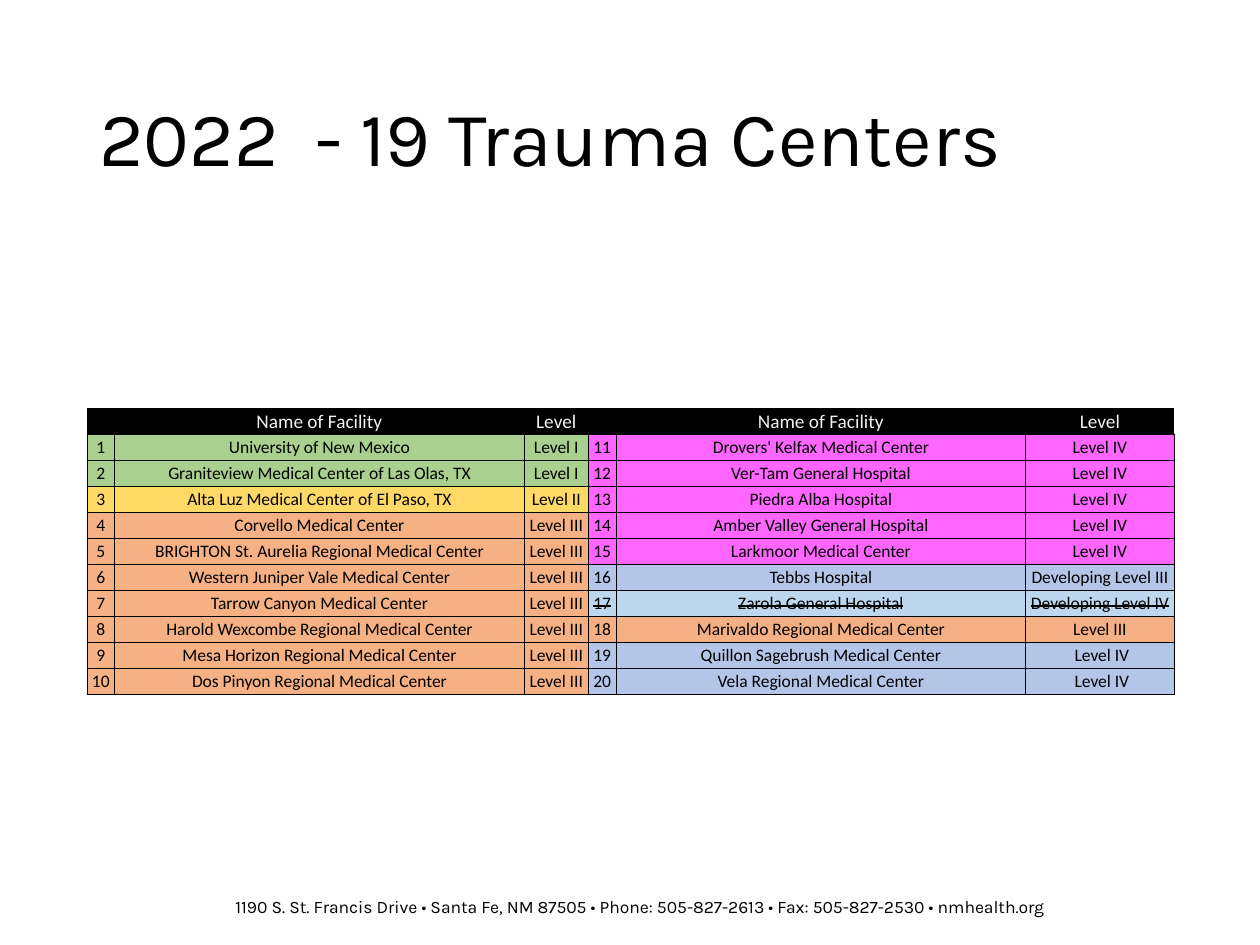
from lxml.etree import SubElement
from pptx import Presentation
from pptx.dml.color import RGBColor
from pptx.enum.text import MSO_ANCHOR as Anchor, PP_ALIGN as Align
from pptx.oxml.ns import qn
from pptx.util import Inches, Pt

COLORS = {
    "black": "000000",
    "header_text": "F2F2F2",
    "green": "A9D08E",
    "yellow": "FFD966",
    "orange": "F5B183",
    "pale_orange": "F4B084",
    "pink": "FF66FF",
    "blue": "B4C6E7",
    "pale_blue": "BDD7EE",
}

HEADER = ["", "Name of Facility", "Level"] * 2
COLUMN_WIDTHS = [0.22, 3.25, 0.51, 0.22, 3.25, 1.18]

# Facilities in numbered order: name, level, fill
FACILITIES = [
    ("University of New Mexico", "Level I", "green"),
    ("Graniteview Medical Center of Las Olas, TX", "Level I", "green"),
    ("Alta Luz Medical Center of El Paso, TX", "Level II", "yellow"),
    ("Corvello Medical Center", "Level III", "orange"),
    ("BRIGHTON St. Aurelia Regional Medical Center", "Level III", "orange"),
    ("Western Juniper Vale Medical Center", "Level III", "orange"),
    ("Tarrow Canyon Medical Center", "Level III", "orange"),
    ("Harold Wexcombe Regional Medical Center", "Level III", "orange"),
    ("Mesa Horizon Regional Medical Center", "Level III", "orange"),
    ("Dos Pinyon Regional Medical Center", "Level III", "orange"),
    ("Drovers' Kelfax Medical Center", "Level IV", "pink"),
    ("Ver-Tam General Hospital", "Level IV", "pink"),
    ("Piedra Alba Hospital", "Level IV", "pink"),
    ("Amber Valley General Hospital", "Level IV", "pink"),
    ("Larkmoor Medical Center", "Level IV", "pink"),
    ("Tebbs Hospital", "Developing Level III", "blue"),
    ("Zarola General Hospital", "Developing Level IV", "pale_blue"),
    ("Marivaldo Regional Medical Center", "Level III", "pale_orange"),
    ("Quillon Sagebrush Medical Center", " Level IV", "blue"),
    ("Vela Regional Medical Center", " Level IV", "blue"),
]
STRUCK_NUMBER = 17
ROWS_PER_HALF = len(FACILITIES) // 2


def rgb(name):
    return RGBColor.from_string(COLORS[name])


def set_values(target, values):
    for name, value in values.items():
        setattr(target, name, value)


def add_span(para, text, font, size, color="black"):
    span = para.add_run()
    span.text = text
    set_values(span.font, {"name": font, "size": Pt(size)})
    span.font.color.rgb = rgb(color)
    return span


def add_text(page, position, text, size, frame_values, line_spacing=1.0):
    box = page.shapes.add_textbox(*map(Inches, position))
    set_values(box.text_frame, {"word_wrap": True, **frame_values})
    para = box.text_frame.paragraphs[0]
    para.line_spacing = line_spacing
    add_span(para, text, "Karla", size)


def set_borders(cell, visible):
    properties = cell._tc.get_or_add_tcPr()
    for side in "LRTB":
        line = SubElement(properties, qn(f"a:ln{side}"), w=str(Pt(0.5)))
        if side in visible:
            fill = SubElement(line, qn("a:solidFill"))
            SubElement(fill, qn("a:srgbClr"), val=COLORS["black"])
        else:
            SubElement(line, qn("a:noFill"))


def fill_cell(cell, text, fill, size=10, color="black", borders="LRTB", struck=False):
    set_values(cell, {
        "vertical_anchor": Anchor.MIDDLE,
        "margin_left": Inches(0.01),
        "margin_top": Inches(0.01),
        "margin_right": Inches(0.01),
        "margin_bottom": 0,
    })
    set_borders(cell, borders)
    cell.fill.solid()
    cell.fill.fore_color.rgb = rgb(fill)
    para = cell.text_frame.paragraphs[0]
    para.alignment = Align.CENTER
    if text:
        span = add_span(para, text, "Calibri", size, color)
        if struck:
            span.font._element.set("strike", "sngStrike")
    else:
        # An empty cell needs its own size to keep the row low
        SubElement(para._p, qn("a:endParaRPr"), sz=str(size * 100))


def add_facility_table(page):
    row_count = ROWS_PER_HALF + 1
    frame = page.shapes.add_table(
        row_count, len(HEADER), Inches(0.69), Inches(3.24), Inches(8.62), Inches(2.27)
    )
    table = frame.table
    set_values(table, {"first_row": False, "horz_banding": False})
    for column, width in zip(table.columns, COLUMN_WIDTHS):
        column.width = Inches(width)
    for row in table.rows:
        row.height = Inches(2.27 / row_count)

    for column, text in enumerate(HEADER):
        fill_cell(table.cell(0, column), text, "black", 11, "header_text", "B")

    # The second half of the list continues in the right-hand columns
    for index, (name, level, fill) in enumerate(FACILITIES):
        half, row = divmod(index, ROWS_PER_HALF)
        number = index + 1
        for offset, text in enumerate((str(number), name, level)):
            cell = table.cell(row + 1, half * 3 + offset)
            fill_cell(cell, text, fill, struck=number == STRUCK_NUMBER)


def main():
    deck = Presentation()
    set_values(deck, {"slide_width": Inches(10), "slide_height": Inches(7.5)})
    page = deck.slides.add_slide(deck.slide_layouts[6])

    # Footer
    add_text(
        page, (1.77, 7.06, 8.2, 0.27),
        "1190 S. St. Francis Drive • Santa Fe, NM 87505 • Phone: 505-827-2613"
        " • Fax: 505-827-2530 • nmhealth.org",
        10, {},
    )
    # Title
    add_text(
        page, (0.69, 0.4, 8.62, 1.45), "2022  - 19 Trauma Centers",
        44, {"vertical_anchor": Anchor.MIDDLE}, 0.9,
    )
    # Trauma centers
    add_facility_table(page)

    deck.save("out.pptx")


if __name__ == "__main__":
    main()
